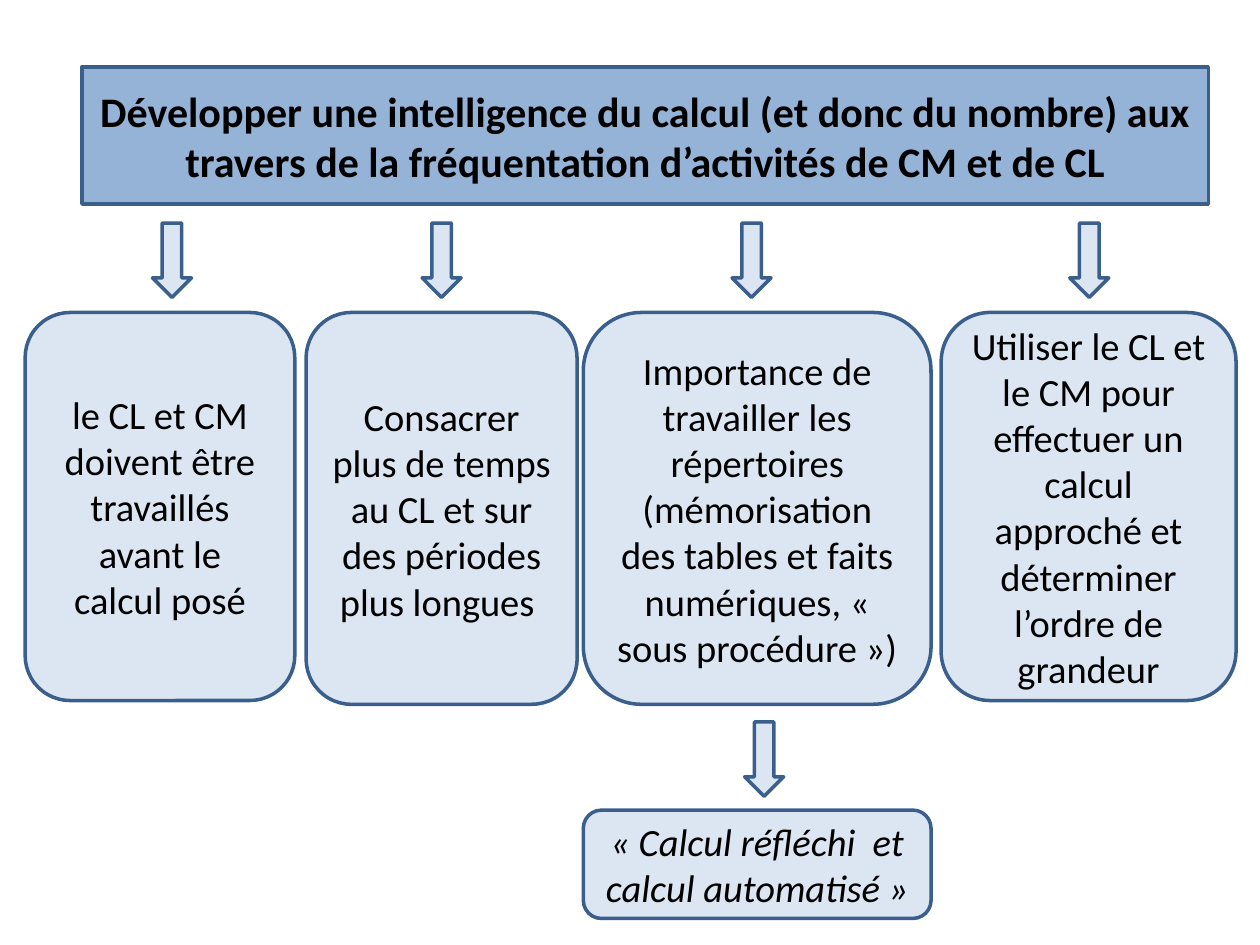
from pptx import Presentation
from pptx.dml.color import RGBColor
from pptx.enum.shapes import MSO_SHAPE as Preset
from pptx.enum.text import MSO_ANCHOR as Anchor, PP_ALIGN as Align
from pptx.oxml.xmlchemy import OxmlElement
from pptx.util import Inches, Pt

TITLE_FILL = "95B3D7"
BOX_FILL = "DCE6F2"
OUTLINE = "3A5F8C"
TEXT_COLOR = "000000"
TITLE = (
    "Développer une intelligence du calcul (et donc du nombre) "
    "aux travers de la fréquentation d’activités de CM et de CL"
)
CONCLUSION = "« Calcul réfléchi  et calcul automatisé »"

COLUMN_TOP = 2.48
ARROW_TOP = 1.77
COLUMNS = [
    (0.2, 2.14, 3.08, 1.21, ["le CL et CM", "doivent être travaillés avant le calcul posé"]),
    (2.43, 2.15, 3.11, 3.35, ["Consacrer plus de temps au CL et sur des périodes plus longues "]),
    (4.63, 2.76, 3.11, 5.81, [
        "Importance de travailler les répertoires (mémorisation des tables "
        "et faits numériques, « sous procédure »)"
    ]),
    (7.47, 2.34, 3.08, 8.49, [
        "Utiliser le CL et le CM pour effectuer un calcul approché "
        "et déterminer l’ordre de grandeur"
    ]),
]


def color(value):
    return RGBColor.from_string(value)


def paint(shape, fill):
    shape.fill.solid()
    shape.fill.fore_color.rgb = color(fill)
    shape.line.color.rgb = color(OUTLINE)
    shape.line.width = Pt(2)


def write(shape, lines, size, bold=False, italic=False):
    frame = shape.text_frame
    frame.word_wrap = True
    frame.vertical_anchor = Anchor.MIDDLE
    frame.text = "\n".join(lines)
    for paragraph in frame.paragraphs:
        paragraph.alignment = Align.CENTER
        font = paragraph.font
        font.name = "Calibri"
        font.size = Pt(size)
        font.bold = bold
        font.italic = italic
        font.color.rgb = color(TEXT_COLOR)


def add_preset(slide, preset, left, top, width, height):
    shape = slide.shapes.add_shape(
        preset, Inches(left), Inches(top), Inches(width), Inches(height)
    )
    shape.shadow.inherit = False
    paint(shape, BOX_FILL)
    return shape


def add_box(slide, left, top, width, height, lines, italic=False):
    box = add_preset(slide, Preset.ROUNDED_RECTANGLE, left, top, width, height)
    write(box, lines, 22, italic=italic)


def add_arrow(slide, left, top):
    add_preset(slide, Preset.DOWN_ARROW, left, top, 0.31, 0.59)


def set_title(slide):
    title = slide.shapes.title
    title.left, title.top = Inches(0.65), Inches(0.53)
    title.width, title.height = Inches(8.94), Inches(1.09)
    geometry = OxmlElement("a:prstGeom")
    geometry.set("prst", "roundRect")
    geometry.append(OxmlElement("a:avLst"))
    title.element.spPr.append(geometry)
    paint(title, TITLE_FILL)
    write(title, [TITLE], 24, bold=True)


def main():
    presentation = Presentation()
    presentation.slide_width = Inches(10)
    presentation.slide_height = Inches(7.5)
    slide = presentation.slides.add_slide(presentation.slide_layouts[5])

    set_title(slide)
    for left, width, height, arrow_left, lines in COLUMNS:
        add_arrow(slide, arrow_left, ARROW_TOP)
        add_box(slide, left, COLUMN_TOP, width, height, lines)
    add_arrow(slide, 5.91, 5.73)
    add_box(slide, 4.63, 6.43, 2.76, 0.86, [CONCLUSION], italic=True)

    presentation.save("out.pptx")


if __name__ == "__main__":
    main()
